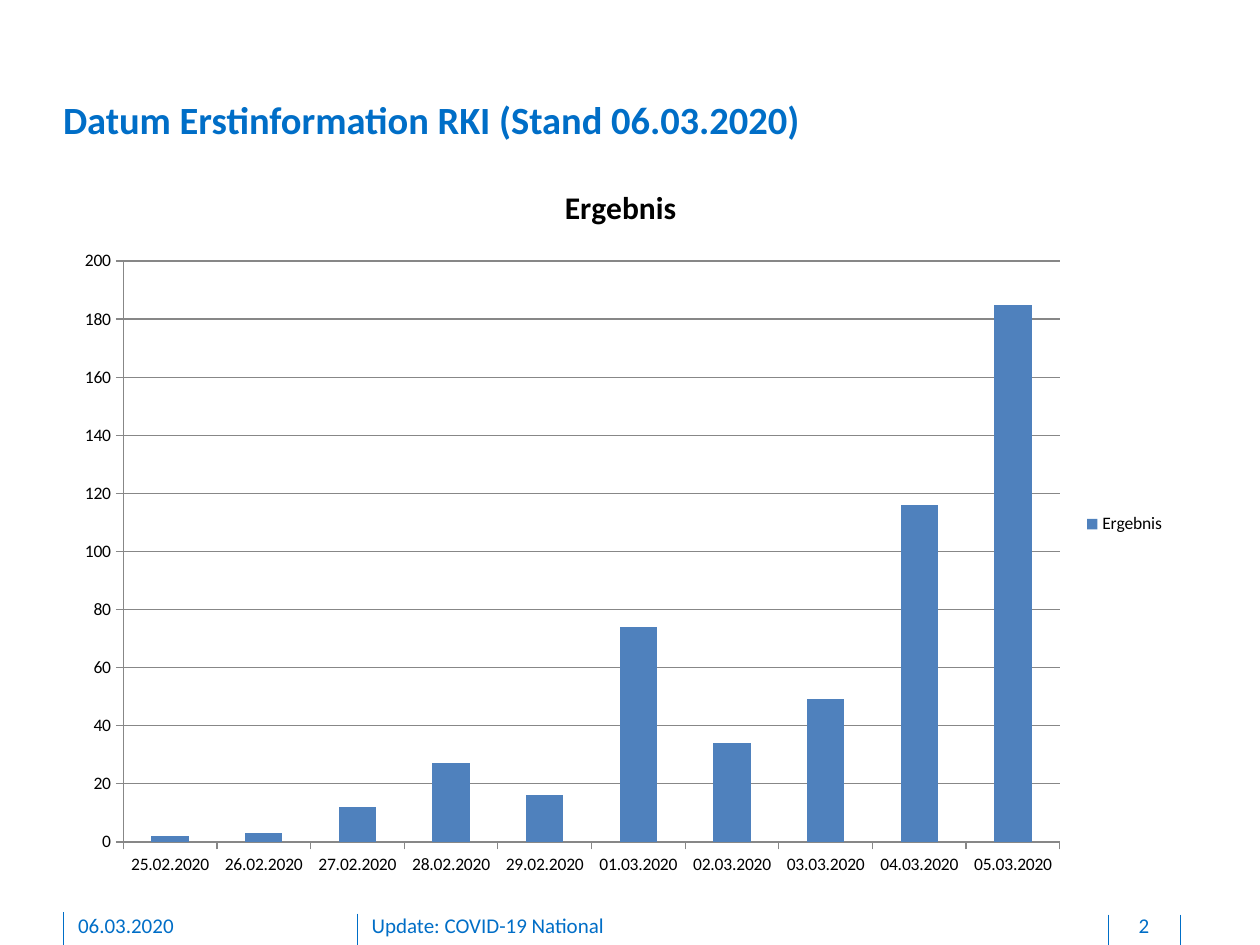
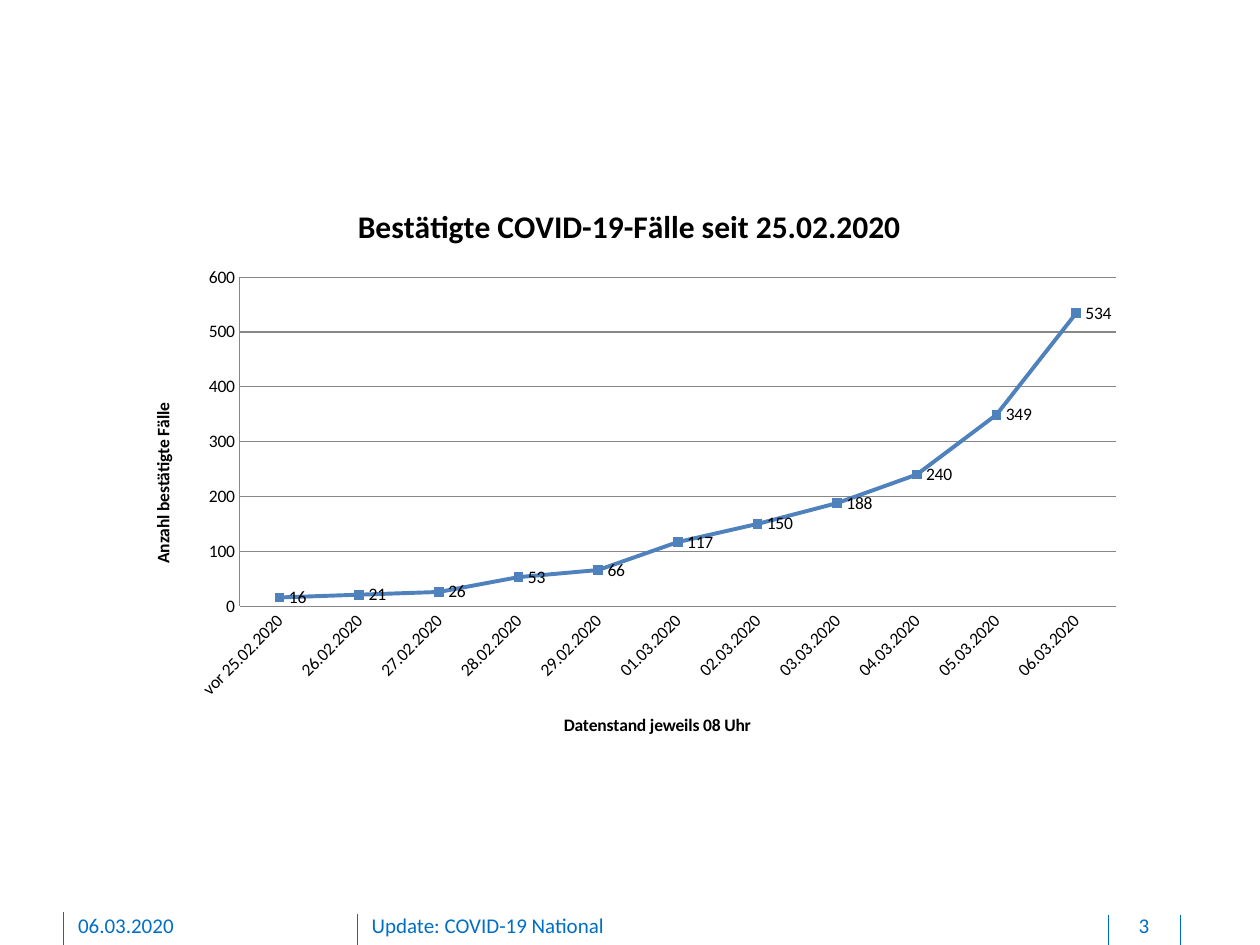
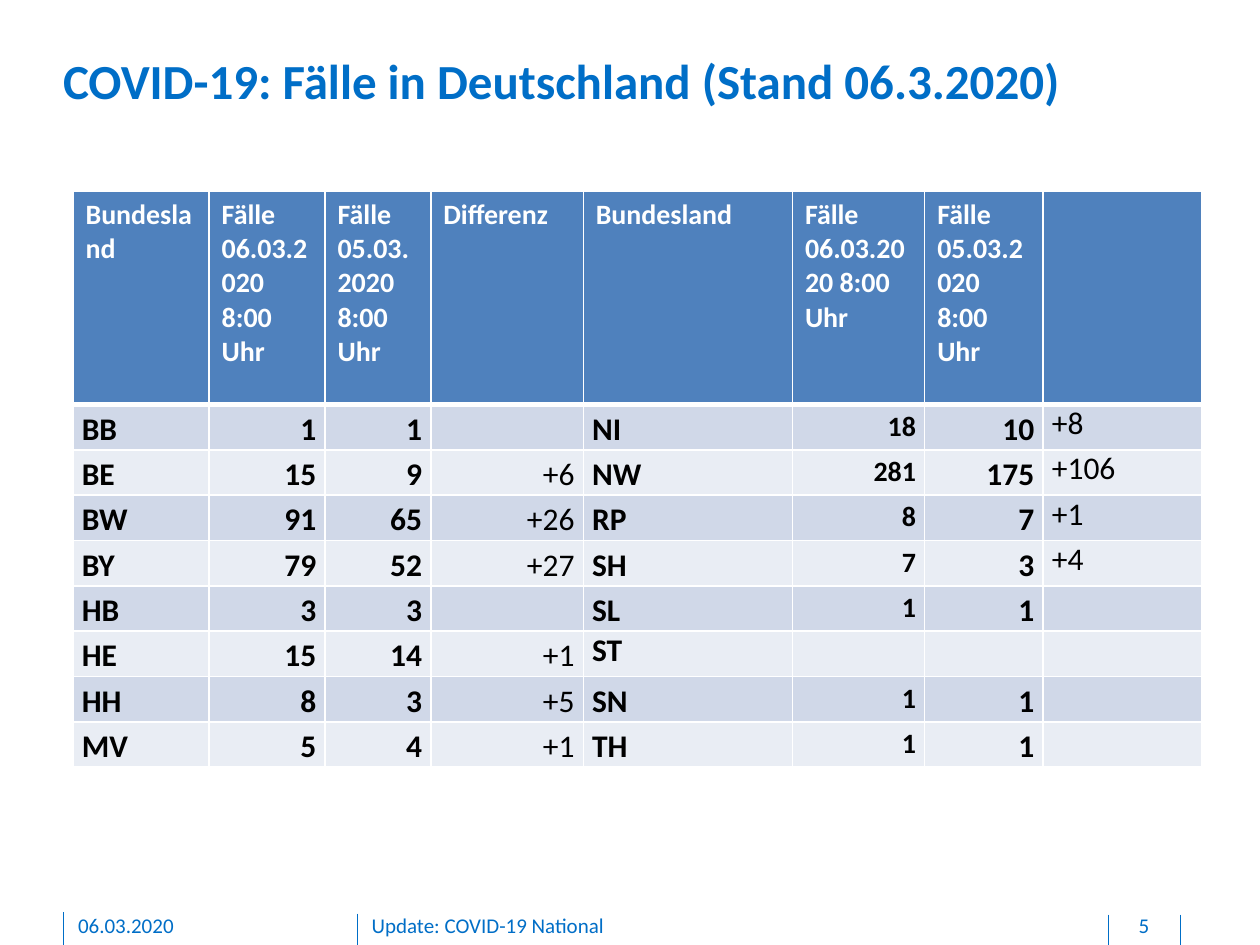
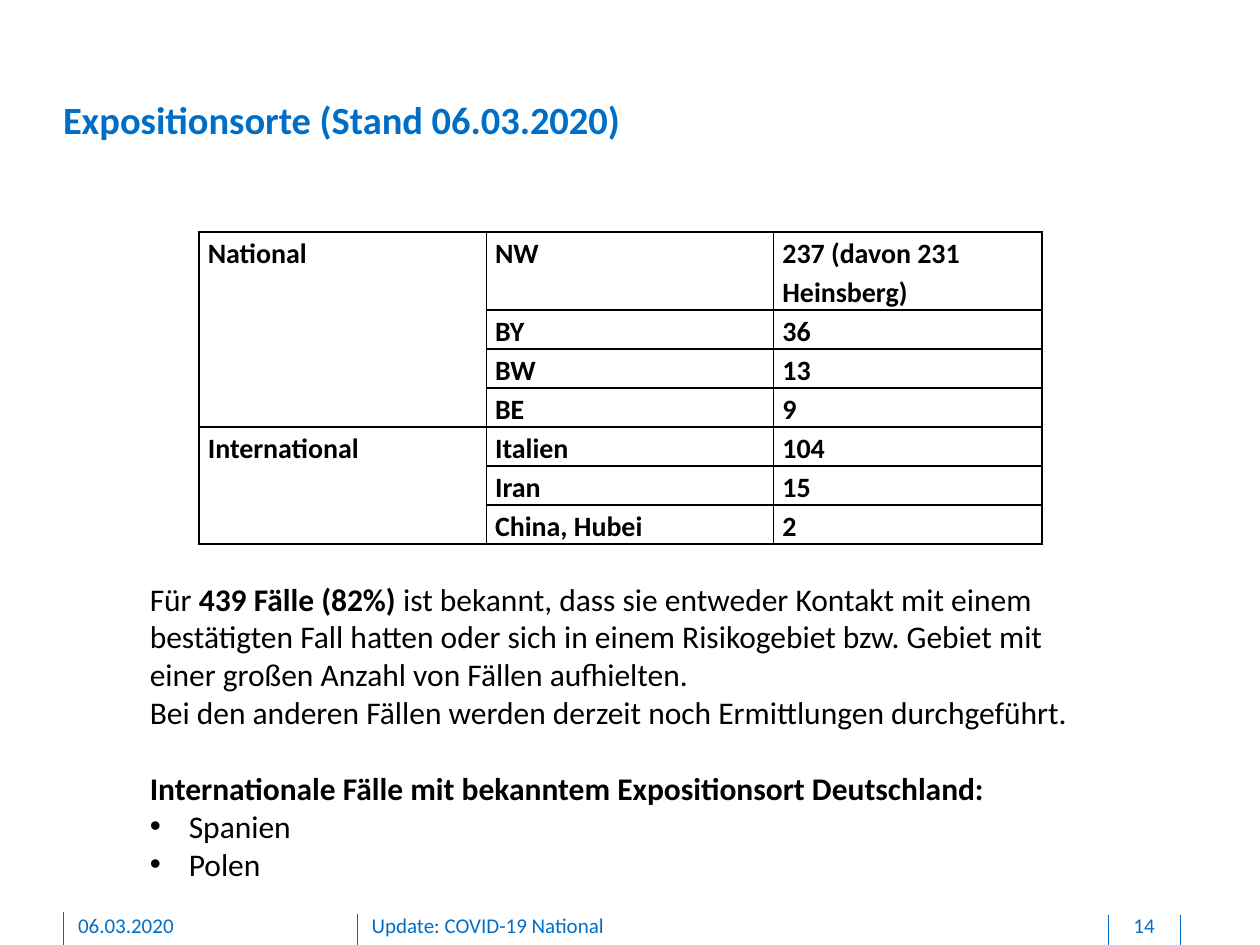
from lxml.etree import SubElement
from pptx import Presentation
from pptx.chart.data import CategoryChartData
from pptx.dml.color import RGBColor
from pptx.enum.chart import (XL_CHART_TYPE, XL_LABEL_POSITION, XL_LEGEND_POSITION,
                             XL_MARKER_STYLE, XL_TICK_MARK)
from pptx.enum.shapes import MSO_CONNECTOR
from pptx.enum.text import PP_ALIGN
from pptx.oxml import parse_xml
from pptx.oxml.ns import nsdecls, qn
from pptx.util import Inches, Pt

FONT = "Calibri"
COLORS = {"brand": "006EC7", "series": "4F81BD", "grid": "878787", "text": "000000",
          "white": "FFFFFF", "band_dark": "D0D8E8", "band_light": "E9EDF4"}

DATE = "06.03.2020"
FOOTER = "Update: COVID-19 National"
DIVIDERS = [(0.5, 7.24), (2.84, 7.25), (8.8, 7.26), (9.37, 7.26)]

REPORTS = {
    "title": "Ergebnis", "name": "Ergebnis", "type": XL_CHART_TYPE.COLUMN_CLUSTERED,
    "at": (0.5, 1.26, 8.85, 5.8), "plot": (0.054, 0.14, 0.84, 0.795),
    "max": 200, "step": 20, "tick": XL_TICK_MARK.OUTSIDE,
    "points": [("25.02.2020", 2), ("26.02.2020", 3), ("27.02.2020", 12), ("28.02.2020", 27),
               ("29.02.2020", 16), ("01.03.2020", 74), ("02.03.2020", 34),
               ("03.03.2020", 49), ("04.03.2020", 116), ("05.03.2020", 185)],
}
CONFIRMED = {
    "title": "Bestätigte COVID-19-Fälle seit 25.02.2020", "name": "Series 1",
    "type": XL_CHART_TYPE.LINE_MARKERS,
    "at": (0.98, 1.43, 8.03, 4.64), "plot": (0.115, 0.166, 0.866, 0.563),
    "max": 600, "step": 100, "tick": XL_TICK_MARK.NONE,
    "points": [("vor 25.02.2020", 16), ("26.02.2020", 21), ("27.02.2020", 26),
               ("28.02.2020", 53), ("29.02.2020", 66), ("01.03.2020", 117),
               ("02.03.2020", 150), ("03.03.2020", 188), ("04.03.2020", 240),
               ("05.03.2020", 349), ("06.03.2020", 534)],
}

STATE_HEADER = [["Bundesland"], ["Fälle 06.03.2020 8:00 Uhr"], ["Fälle 05.03.2020", "8:00 Uhr"],
                ["Differenz"], ["Bundesland"], ["Fälle 06.03.2020 8:00 Uhr"],
                ["Fälle 05.03.2020", "8:00 Uhr"], []]
STATE_ROWS = [
    ("BB", "1", "1", "", "NI", "18", "10", "+8"),
    ("BE", "15", "9", "+6", "NW", "281", "175", "+106"),
    ("BW", "91", "65", "+26", "RP", "8", "7", "+1"),
    ("BY", "79", "52", "+27", "SH", "7", "3", "+4"),
    ("HB", "3", "3", "", "SL", "1", "1", ""),
    ("HE", "15", "14", "+1", "ST", "", "", ""),
    ("HH", "8", "3", "+5", "SN", "1", "1", ""),
    ("MV", "5", "4", "+1", "TH", "1", "1", ""),
]
STATE_WIDTHS = [1.08, 0.92, 0.84, 1.21, 1.66, 1.05, 0.94, 1.26]

EXPOSURE = {
    "National": [("NW", "237 (davon 231 Heinsberg)"), ("BY", "36"), ("BW", "13"), ("BE", "9")],
    "International": [("Italien", "104"), ("Iran", "15"), ("China, Hubei", "2")],
}
EXPOSURE_WIDTHS = [2.28, 2.28, 2.13]
FINDINGS = [
    [("Für ", False), ("439 Fälle (82%) ", True),
     ("ist bekannt, dass sie entweder Kontakt mit einem bestätigten Fall hatten oder sich in "
      "einem Risikogebiet bzw. Gebiet mit einer großen Anzahl von Fällen aufhielten.", False)],
    [("Bei den anderen Fällen werden derzeit noch Ermittlungen durchgeführt.", False)],
]
ABROAD_HEADING = "Internationale Fälle mit bekanntem Expositionsort Deutschland:"
ABROAD = ["Spanien", "Polen"]


def rgb(color):
    return RGBColor.from_string(COLORS[color])


def style(font, size, color="text", bold=False):
    font.name, font.size, font.bold = FONT, Pt(size), bold
    font.color.rgb = rgb(color)


def add_run(paragraph, text, size, color="text", bold=False):
    run = paragraph.add_run()
    run.text = text
    style(run.font, size, color, bold)


def add_box(slide, at, margins=(0, 0, 0, 0)):
    frame = slide.shapes.add_textbox(*map(Inches, at)).text_frame
    frame.word_wrap = True
    set_margins(frame, margins)
    return frame


def set_margins(target, margins):
    (target.margin_left, target.margin_top,
     target.margin_right, target.margin_bottom) = map(Inches, margins)


def add_title(slide, text, top=0.76, height=0.37, size=22):
    frame = add_box(slide, (0.5, top, 8.85, height))
    add_run(frame.paragraphs[0], text, size, "brand", True)


def add_slide(deck, number):
    slide = deck.slides.add_slide(deck.slide_layouts[6])
    for x, top in DIVIDERS:
        divider = slide.shapes.add_connector(MSO_CONNECTOR.STRAIGHT, Inches(x), Inches(top),
                                             Inches(x), Inches(7.5))
        divider.line.color.rgb = rgb("brand")
        divider.line.width = Pt(0.5)
        SubElement(divider._element.spPr, qn("a:effectLst"))
    for text, left, width, align in [(DATE, 0.62, 2.03, PP_ALIGN.LEFT),
                                     (FOOTER, 2.95, 5.67, PP_ALIGN.LEFT),
                                     (str(number), 8.81, 0.54, PP_ALIGN.CENTER)]:
        paragraph = add_box(slide, (left, 7.24, width, 0.21), (0, 0, 0, 0.05)).paragraphs[0]
        paragraph.alignment = align
        add_run(paragraph, text, 12, "brand")
    return slide


def place_plot(chart, plot):
    area = chart._chartSpace.chart.plotArea
    for layout in area.findall(qn("c:layout")):
        area.remove(layout)
    places = "".join(f'<c:{key} val="{value}"/>' for key, value in zip("xywh", plot))
    area.insert(0, parse_xml(
        f'<c:layout {nsdecls("c")}><c:manualLayout><c:layoutTarget val="inner"/>'
        f'<c:xMode val="edge"/><c:yMode val="edge"/>{places}</c:manualLayout></c:layout>'))


def add_chart(slide, content):
    data = CategoryChartData()
    data.categories = [day for day, _ in content["points"]]
    data.add_series(content["name"], [count for _, count in content["points"]])
    chart = slide.shapes.add_chart(content["type"], *map(Inches, content["at"]), data).chart
    style(chart.font, 10)
    chart.has_legend = False
    chart.has_title = True
    add_run(chart.chart_title.text_frame.paragraphs[0], content["title"], 18, bold=True)
    chart.chart_title.include_in_layout = False
    for axis in (chart.category_axis, chart.value_axis):
        axis.major_tick_mark = content["tick"]
        axis.minor_tick_mark = XL_TICK_MARK.NONE
        axis.format.line.color.rgb = rgb("grid")
        style(axis.tick_labels.font, 10)
    counts = chart.value_axis
    counts.minimum_scale, counts.maximum_scale = 0, content["max"]
    counts.major_unit = content["step"]
    counts.has_major_gridlines = True
    counts.major_gridlines.format.line.color.rgb = rgb("grid")
    chart.plots[0].vary_by_categories = False
    place_plot(chart, content["plot"])
    return chart


def add_reports(deck):
    slide = add_slide(deck, 2)
    add_title(slide, "Datum Erstinformation RKI (Stand 06.03.2020)")
    chart = add_chart(slide, REPORTS)
    chart.has_legend = True
    chart.legend.position = XL_LEGEND_POSITION.RIGHT
    chart.legend.include_in_layout = False
    style(chart.legend.font, 10)
    plot = chart.plots[0]
    plot.gap_width = 150
    fill = plot.series[0].format.fill
    fill.solid()
    fill.fore_color.rgb = rgb("series")


def add_confirmed(deck):
    chart = add_chart(add_slide(deck, 3), CONFIRMED)
    for axis, text in [(chart.category_axis, "Datenstand jeweils 08 Uhr"),
                       (chart.value_axis, "Anzahl bestätigte Fälle")]:
        axis.has_title = True
        add_run(axis.axis_title.text_frame.paragraphs[0], text, 10, bold=True)
    label_body = chart.category_axis._element.find(qn("c:txPr")).find(qn("a:bodyPr"))
    label_body.set("rot", "-2700000")
    label_body.set("vert", "horz")
    cases = chart.plots[0].series[0]
    cases.smooth = False
    cases.format.line.color.rgb = rgb("series")
    cases.format.line.width = Pt(2.25)
    cases.marker.style = XL_MARKER_STYLE.SQUARE
    cases.marker.size = 5
    cases.marker.format.fill.solid()
    cases.marker.format.fill.fore_color.rgb = rgb("series")
    cases.marker.format.line.color.rgb = rgb("series")
    labels = cases.data_labels
    labels.show_value = True
    labels.position = XL_LABEL_POSITION.RIGHT
    style(labels.font, 10)


def add_table(slide, left, top, widths, heights):
    table = slide.shapes.add_table(len(heights), len(widths), Inches(left), Inches(top),
                                   Inches(sum(widths)), Inches(sum(heights))).table
    table.horz_banding = table.first_row = False
    for column, width in zip(table.columns, widths):
        column.width = Inches(width)
    for row, height in zip(table.rows, heights):
        row.height = Inches(height)
    return table


def format_cell(cell, border, fill=None, top=1, bottom=1):
    properties = cell._tc.get_or_add_tcPr()
    for side, width in zip("LRTB", (1, 1, top, bottom)):
        line = SubElement(properties, qn(f"a:ln{side}"), w=str(Pt(width)))
        SubElement(SubElement(line, qn("a:solidFill")), qn("a:srgbClr"), val=COLORS[border])
    if fill:
        cell.fill.solid()
        cell.fill.fore_color.rgb = rgb(fill)
    else:
        cell.fill.background()


def fill_cell(cell, text, size, bold=True, align=PP_ALIGN.LEFT, spacing=1.15, after=6):
    set_margins(cell, (0.07, 0, 0.07, 0))
    if text:
        paragraph = cell.text_frame.paragraphs[0]
        paragraph.alignment = align
        if spacing:
            paragraph.line_spacing = spacing
        paragraph.space_after = Pt(after)
        add_run(paragraph, text, size, bold=bold)


def add_states(deck):
    slide = add_slide(deck, 5)
    add_title(slide, "COVID-19: Fälle in Deutschland (Stand 06.3.2020)", 0.4, 0.47, 28)
    table = add_table(slide, 0.58, 1.52, STATE_WIDTHS, [1.69] + [0.36] * len(STATE_ROWS))
    table.first_row = True
    for c, lines in enumerate(STATE_HEADER):
        cell = table.cell(0, c)
        format_cell(cell, "white", "series", bottom=3)
        for i, line in enumerate(lines):
            frame = cell.text_frame
            paragraph = frame.add_paragraph() if i else frame.paragraphs[0]
            add_run(paragraph, line, 16, "white", True)
    for r, row in enumerate(STATE_ROWS, 1):
        for c, text in enumerate(row):
            cell = table.cell(r, c)
            format_cell(cell, "white", "band_dark" if r % 2 else "band_light",
                        top=3 if r == 1 else 1)
            plain = c == 7 or text == "ST"
            fill_cell(cell, text, 16 if c == 5 else 18, bold=c not in (3, 7),
                      align=PP_ALIGN.LEFT if c in (0, 4, 7) else PP_ALIGN.RIGHT,
                      spacing=None if plain else 1.15,
                      after=0 if plain or c in (1, 5) else 6)


def add_exposure(deck):
    slide = add_slide(deck, 14)
    add_title(slide, "Expositionsorte (Stand 06.03.2020)")
    table = add_table(slide, 1.58, 1.84, EXPOSURE_WIDTHS, [0.62] + [0.31] * 6)
    for row in table.rows:
        for cell in row.cells:
            format_cell(cell, "text")
            set_margins(cell, (0.07, 0, 0.07, 0))
    first = 0
    for region, places in EXPOSURE.items():
        table.cell(first, 0).merge(table.cell(first + len(places) - 1, 0))
        fill_cell(table.cell(first, 0), region, 16)
        for r, place in enumerate(places, first):
            for c, text in enumerate(place, 1):
                fill_cell(table.cell(r, c), text, 16)
        first += len(places)

    frame = add_box(slide, (1.09, 4.55, 7.71, 2.52), (0.1, 0.05, 0.1, 0.05))
    for i, runs in enumerate(FINDINGS):
        paragraph = frame.add_paragraph() if i else frame.paragraphs[0]
        for text, bold in runs:
            add_run(paragraph, text, 18, bold=bold)
    heading = frame.add_paragraph()
    heading.space_before = Pt(22)
    add_run(heading, ABROAD_HEADING, 18, bold=True)
    for country in ABROAD:
        paragraph = frame.add_paragraph()
        properties = paragraph._p.get_or_add_pPr()
        properties.set("marL", str(Inches(0.31)))
        properties.set("indent", str(-Inches(0.31)))
        SubElement(properties, qn("a:buFont"), typeface="Arial")
        SubElement(properties, qn("a:buChar"), char="•")
        add_run(paragraph, country, 18)


def main():
    deck = Presentation()
    deck.slide_width, deck.slide_height = Inches(10), Inches(7.5)
    for build in (add_reports, add_confirmed, add_states, add_exposure):
        build(deck)
    deck.save("out.pptx")


if __name__ == "__main__":
    main()
